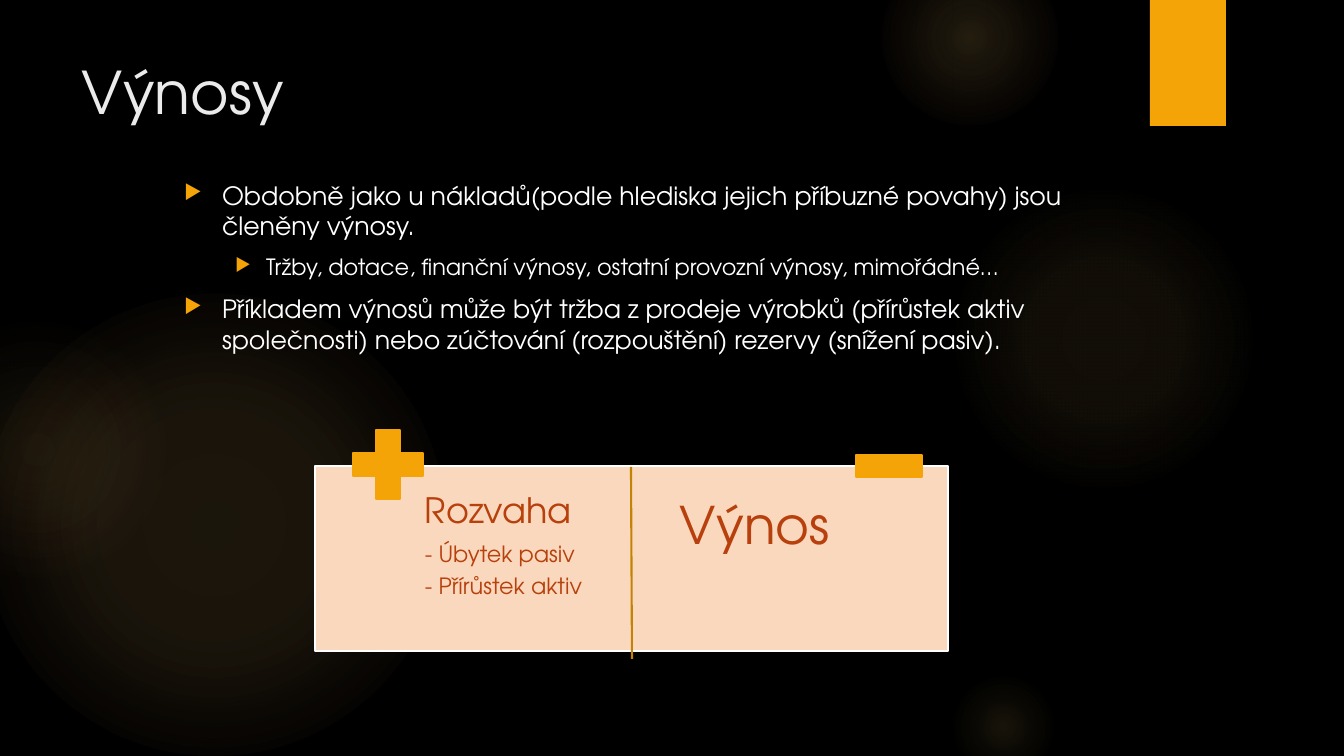
from lxml import etree
from pptx import Presentation
from pptx.dml.color import RGBColor
from pptx.enum.shapes import MSO_CONNECTOR, MSO_SHAPE
from pptx.enum.text import MSO_ANCHOR
from pptx.oxml import parse_xml
from pptx.oxml.ns import nsdecls, qn
from pptx.util import Pt

RECT, OVAL, PLUS = MSO_SHAPE.RECTANGLE, MSO_SHAPE.OVAL, MSO_SHAPE.CROSS
STRAIGHT = MSO_CONNECTOR.STRAIGHT
TOP, MIDDLE = MSO_ANCHOR.TOP, MSO_ANCHOR.MIDDLE
EMU_PER_PX = 914400 / 100.8
FONT = "TeX Gyre Adventor"
COLORS = {
    "black": "000000", "white": "FFFFFF", "title": "EBEBEB",
    "amber": "F5A408", "glow": "FAC96A", "glow_rose": "F59B74",
    "peach": "FAD8BD", "rust": "B7400D", "divider": "C48306",
}


def px(n):
    return round(n * EMU_PER_PX)


def rgb(name):
    return RGBColor.from_string(COLORS[name])


def add_block(shapes, kind, box, fill=None, line=None):
    sp = shapes.add_shape(kind, *map(px, box))
    sp.shadow.inherit = False
    if fill:
        sp.fill.solid()
        sp.fill.fore_color.rgb = rgb(fill)
    if line:
        sp.line.color.rgb = rgb(line)
        sp.line.width = Pt(1.5)
    else:
        sp.line.fill.background()
    return sp


def add_glow(shapes, box, stops, edge="glow"):
    """Soft light: stops are (position %, opacity %), the last in the edge colour."""
    sp = add_block(shapes, OVAL, box)
    names = ["glow", "glow", edge]
    gs = "".join(
        f'<a:gs pos="{pos * 1000}"><a:srgbClr val="{COLORS[name]}">'
        f'<a:alpha val="{alpha * 1000}"/></a:srgbClr></a:gs>'
        for name, (pos, alpha) in zip(names, stops))
    grad = parse_xml(
        f'<a:gradFill {nsdecls("a")} rotWithShape="1"><a:gsLst>{gs}</a:gsLst>'
        '<a:path path="circle"><a:fillToRect l="50000" t="50000" r="50000" b="50000"/>'
        '</a:path></a:gradFill>')
    sp._element.spPr.find(qn("a:prstGeom")).addnext(grad)


def add_divider(shapes, x1, y1, x2, y2):
    line = shapes.add_connector(STRAIGHT, px(x1), px(y1), px(x2), px(y2))
    line.line.color.rgb = rgb("divider")
    line.line.width = Pt(1.5)
    etree.SubElement(line._element.spPr, qn("a:effectLst"))


def add_text_box(shapes, box, inset_x=10, inset_y=5, anchor=TOP):
    tf = shapes.add_textbox(*map(px, box)).text_frame
    tf.word_wrap = True
    tf.vertical_anchor = anchor
    tf.margin_left = tf.margin_right = px(inset_x)
    tf.margin_top = tf.margin_bottom = px(inset_y)
    return tf


def add_text(tf, text, size, color, before=0, after=6, spacing=1.0):
    p = tf.paragraphs[0]
    if p.runs:
        p = tf.add_paragraph()
    p.space_before, p.space_after = Pt(before), Pt(after)
    p.line_spacing = spacing
    r = p.add_run()
    r.text = text
    r.font.name, r.font.size = FONT, Pt(size)
    r.font.color.rgb = rgb(color)
    return p


def add_bullet(p, level, left, hang):
    p.level = level
    pPr = p._p.get_or_add_pPr()
    pPr.set("marL", str(px(left)))
    pPr.set("indent", str(-px(hang)))
    color = etree.SubElement(pPr, qn("a:buClr"))
    etree.SubElement(color, qn("a:srgbClr"), val=COLORS["amber"])
    etree.SubElement(pPr, qn("a:buSzPct"), val="80000")
    etree.SubElement(pPr, qn("a:buChar"), char="▶")


def add_background(s):
    s.background.fill.solid()
    s.background.fill.fore_color.rgb = rgb("black")
    add_glow(s.shapes, (-17, 294, 462, 462), [(0, 11), (36, 10), (75, 0)])
    add_glow(s.shapes, (-93, 320, 260, 260), [(0, 8), (36, 5), (71, 0)], "glow_rose")
    add_glow(s.shapes, (949, 184, 310, 310), [(0, 7), (36, 6), (69, 0)])
    add_glow(s.shapes, (882, -50, 176, 176), [(0, 14), (36, 7), (73, 0)])
    add_glow(s.shapes, (949, 672, 109, 109), [(0, 10), (31, 5), (66, 0)])
    add_block(s.shapes, RECT, (1150, 0, 76, 126), "amber")


def add_body(s):
    tf = add_text_box(s.shapes, (174, 175, 987, 225))
    levels = [(18, 38, 38), (16, 82, 31)]  # size, left indent, hanging
    items = [
        (0, "Obdobně jako u nákladů(podle hlediska jejich příbuzné povahy) "
            "jsou členěny výnosy."),
        (1, "Tržby, dotace, finanční výnosy, ostatní provozní výnosy, mimořádné…"),
        (0, "Příkladem výnosů může být tržba z prodeje výrobků (přírůstek aktiv "
            "společnosti) nebo zúčtování (rozpouštění) rezervy (snížení pasiv)."),
    ]
    for level, text in items:
        size, left, hang = levels[level]
        p = add_text(tf, text, size, "white", before=size * 0.2)
        add_bullet(p, level, left, hang)


def add_account(s):
    shapes = s.shapes.add_group_shape().shapes
    add_block(shapes, RECT, (315, 466, 633, 185), "peach", "white")

    # Two sides of the account
    right = add_text_box(shapes, (672, 492, 169, 157), 8, 8)
    left = add_text_box(shapes, (420, 488, 203, 161), 5, 5)
    for tf, text, size in [
        (right, "Výnos", 37),
        (left, "Rozvaha", 25),
        (left, "- Úbytek pasiv", 16),
        (left, "- Přírůstek aktiv", 16),
    ]:
        add_text(tf, text, size, "rust", after=size * 0.35, spacing=0.9)

    # Plus, minus and dividing line
    plus = add_block(shapes, PLUS, (353, 430, 70, 69), "amber", "amber")
    plus.adjustments[0] = 0.33
    add_block(shapes, RECT, (856, 455, 66, 22), "amber", "amber")
    add_divider(shapes, 631, 467, 632, 659)


def main():
    prs = Presentation()
    prs.slide_width, prs.slide_height = px(1344), px(756)
    s = prs.slides.add_slide(prs.slide_layouts[6])
    add_background(s)
    title = add_text_box(s.shapes, (72, 50, 1037, 81), anchor=MIDDLE)
    add_text(title, "Výnosy", 42, "title")
    add_body(s)
    add_account(s)
    prs.save("out.pptx")


if __name__ == "__main__":
    main()
